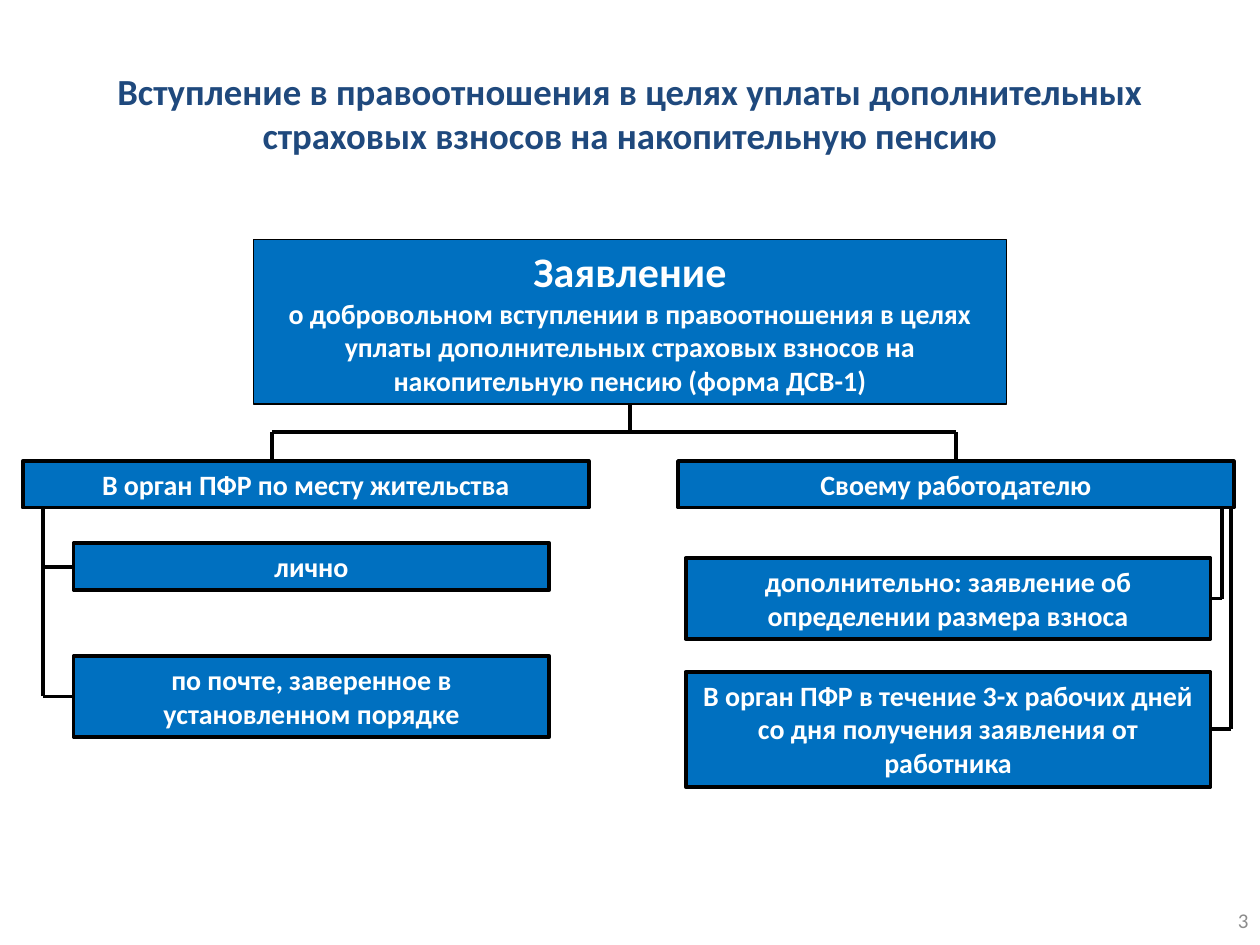
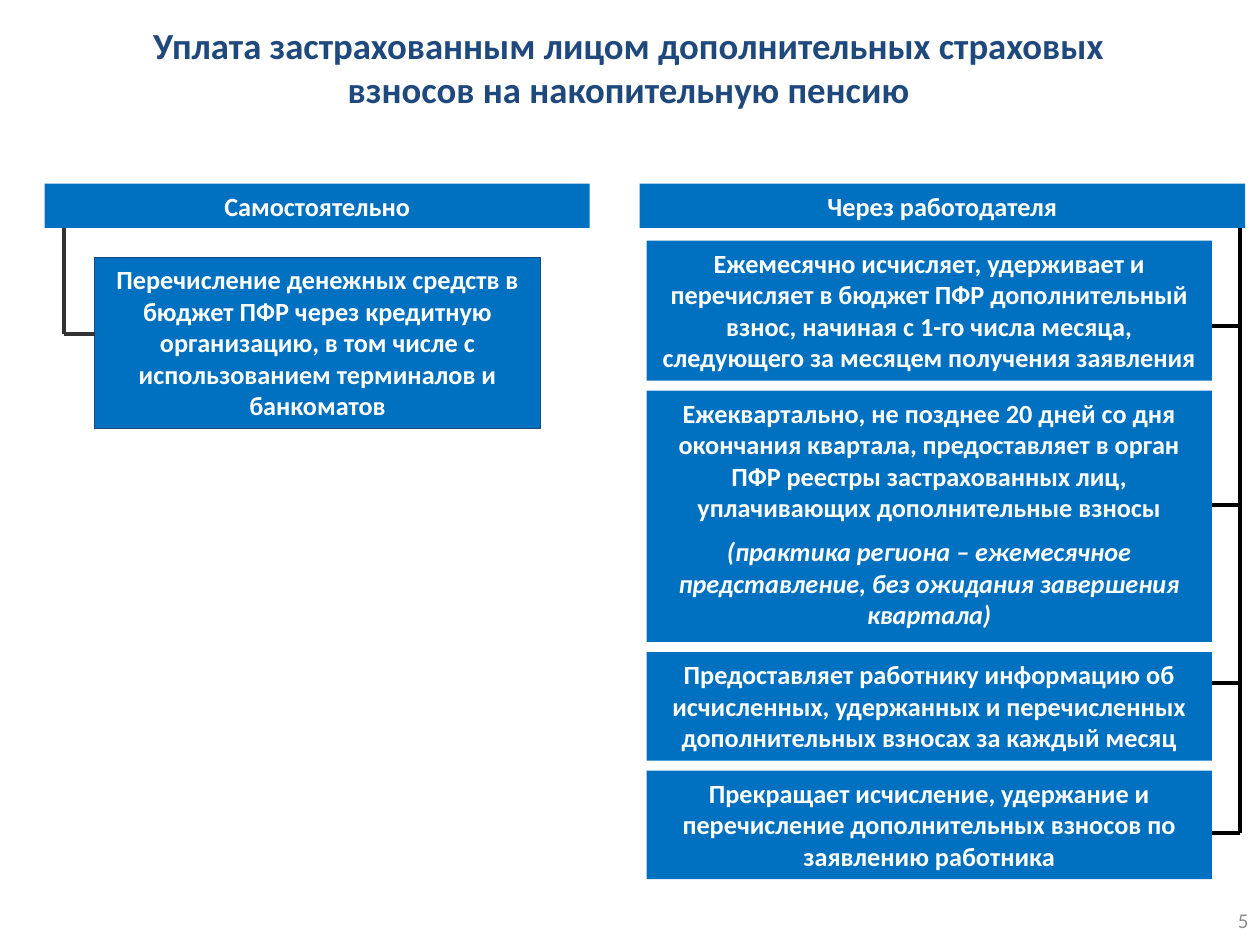
from dataclasses import dataclass
from itertools import accumulate
from typing import Any, Optional

import pptx
import pptx.dml.color
import pptx.enum.shapes
import pptx.enum.text
import pptx.oxml.xmlchemy
import pptx.shapes.autoshape
import pptx.slide
import pptx.util

Pt = pptx.util.Pt
RGB = pptx.dml.color.RGBColor
ALIGN = pptx.enum.text.PP_ALIGN
ANCHOR = pptx.enum.text.MSO_ANCHOR
TOP, LEFT, BOTTOM, RIGHT = range(4)


@dataclass(frozen=True)
class Theme:
    font: str = "Calibri"
    navy: str = "1F497D"
    blue: str = "0070C0"
    white: str = "FFFFFF"
    black: str = "000000"
    charcoal: str = "333333"
    grey: str = "8C8C8C"
    title: float = 21
    heading: float = 24
    large: float = 16
    medium: float = 15
    number: float = 12
    thin: float = 0.75
    thick: float = 2.25


THEME = Theme()


@dataclass(frozen=True)
class Para:
    text: str
    size: float
    italic: bool = False
    before: float = 0


@dataclass(frozen=True)
class Box:
    left: float
    top: float
    width: float
    height: float
    paras: tuple[Para, ...]
    border: Optional[str] = None
    weight: float = THEME.thick

    @property
    def bottom(self) -> float:
        return self.top + self.height

    @property
    def right(self) -> float:
        return self.left + self.width

    @property
    def middle(self) -> float:
        return self.top + self.height / 2

    @property
    def center(self) -> float:
        return self.left + self.width / 2


@dataclass(frozen=True)
class Line:
    x1: float
    y1: float
    x2: float
    y2: float
    color: str = THEME.black
    start: Optional[tuple[Box, int]] = None
    end: Optional[tuple[Box, int]] = None


@dataclass(frozen=True)
class Scheme:
    title: str
    title_frame: tuple[float, float, float, float]
    number: str
    boxes: tuple[Box, ...]
    lines: tuple[Line, ...]


def apply(target: Any, formats: dict[str, Any]) -> None:
    for name, value in formats.items():
        setattr(target, name, value)


def place(sp: Any, frame: tuple[float, float, float, float]) -> None:
    names = ("left", "top", "width", "height")
    apply(sp, dict(zip(names, map(Pt, frame))))


def write(tf: Any, paras: tuple[Para, ...], color: str,
          bold: bool = True, align: Any = ALIGN.CENTER, anchor: Any = ANCHOR.MIDDLE) -> None:
    apply(tf, {"word_wrap": True, "auto_size": pptx.enum.text.MSO_AUTO_SIZE.NONE,
               "vertical_anchor": anchor})
    for i, para in enumerate(paras):
        p = tf.add_paragraph() if i else tf.paragraphs[0]
        apply(p, {"alignment": align, "space_before": Pt(para.before)})
        r = p.add_run()
        r.text = para.text
        apply(r.font, {"name": THEME.font, "size": Pt(para.size), "bold": bold,
                       "italic": para.italic})
        r.font.color.rgb = RGB.from_string(color)


def draw_box(s: pptx.slide.Slide, box: Box) -> pptx.shapes.autoshape.Shape:
    sp = s.shapes.add_shape(pptx.enum.shapes.MSO_SHAPE.RECTANGLE,
                            Pt(box.left), Pt(box.top), Pt(box.width), Pt(box.height))
    sp.shadow.inherit = False
    sp.fill.solid()
    sp.fill.fore_color.rgb = RGB.from_string(THEME.blue)
    if box.border:
        sp.line.color.rgb = RGB.from_string(box.border)
        sp.line.width = Pt(box.weight)
    else:
        sp.line.fill.background()
    write(sp.text_frame, box.paras, THEME.white, anchor=ANCHOR.TOP)
    return sp


def draw_line(s: pptx.slide.Slide, line: Line, drawn: dict[Box, Any]) -> None:
    cxn = s.shapes.add_connector(pptx.enum.shapes.MSO_CONNECTOR.STRAIGHT,
                                 Pt(line.x1), Pt(line.y1), Pt(line.x2), Pt(line.y2))
    cxn.line.color.rgb = RGB.from_string(line.color)
    cxn.line.width = Pt(THEME.thick)
    cxn._element.spPr.append(pptx.oxml.xmlchemy.OxmlElement("a:effectLst"))
    if line.start:
        cxn.begin_connect(drawn[line.start[0]], line.start[1])
    if line.end:
        cxn.end_connect(drawn[line.end[0]], line.end[1])


def draw_scheme(prs: Any, scheme: Scheme) -> None:
    s = prs.slides.add_slide(prs.slide_layouts[5])
    place(s.shapes.title, scheme.title_frame)
    write(s.shapes.title.text_frame, (Para(scheme.title, THEME.title),), THEME.navy)
    drawn = {box: draw_box(s, box) for box in scheme.boxes}
    for line in scheme.lines:
        draw_line(s, line, drawn)
    number = s.shapes.add_textbox(Pt(553), Pt(511), Pt(167.5), Pt(29))
    write(number.text_frame, (Para(scheme.number, THEME.number),), THEME.grey,
          bold=False, align=ALIGN.RIGHT)


def branch(x: float, box: Box, side: int) -> Line:
    edge = box.left if side == LEFT else box.right
    return Line(x, box.middle, edge, box.middle, end=(box, side))


def joining() -> Scheme:
    def option(left: float, top: float, width: float, height: float, text: str) -> Box:
        return Box(left, top, width, height, (Para(text, THEME.large),), THEME.black)

    statement = Box(144.75, 137, 430.5, 94, (
        Para("Заявление", THEME.heading),
        Para("о добровольном вступлении в правоотношения в целях уплаты дополнительных "
             "страховых взносов на накопительную пенсию (форма ДСВ-1)", THEME.large),
    ), THEME.black, THEME.thin)
    fund = option(13, 263.5, 323.5, 26.5, "В орган ПФР по месту жительства")
    employer = option(387.5, 263.5, 317.5, 26.5, "Своему работодателю")
    in_person = option(42, 310.5, 272, 26.5, "лично")
    by_mail = option(42, 375, 272, 46, "по почте, заверенное в установленном порядке")
    amount = option(391.75, 319, 300, 46,
                    "дополнительно: заявление об определении размера взноса")
    deadline = option(391.75, 384, 300, 65.5,
                      "В орган ПФР в течение 3-х рабочих дней со дня получения заявления "
                      "от работника")

    bus, fund_x, fund_stem, amount_stem, deadline_stem = 247, 155.5, 24.5, 698.5, 703.5
    return Scheme(
        "Вступление в правоотношения в целях уплаты дополнительных страховых взносов "
        "на накопительную пенсию",
        (42.5, 26, 635, 77), "3",
        (statement, fund, employer, in_person, by_mail, amount, deadline),
        (
            Line(statement.center, statement.bottom, statement.center, bus,
                 start=(statement, BOTTOM)),
            Line(fund_x, bus, employer.center, bus),
            Line(fund_x, bus, fund_x, fund.top),
            Line(employer.center, bus, employer.center, employer.top, end=(employer, TOP)),
            Line(fund_stem, fund.bottom, fund_stem, by_mail.middle),
            branch(fund_stem, in_person, LEFT),
            branch(fund_stem, by_mail, LEFT),
            Line(amount_stem, employer.bottom, amount_stem, amount.middle),
            branch(amount_stem, amount, RIGHT),
            Line(deadline_stem, employer.bottom, deadline_stem, deadline.middle),
            branch(deadline_stem, deadline, RIGHT),
        ))


def payment() -> Scheme:
    def heading(left: float, width: float, text: str) -> Box:
        return Box(left, 105, width, 25.25, (Para(text, THEME.medium),))

    alone = heading(25.5, 311.5, "Самостоятельно")
    employer = heading(365.5, 346, "Через работодателя")
    transfer = Box(54, 147, 255, 98, (
        Para("Перечисление денежных средств в бюджет ПФР через кредитную организацию, "
             "в том числе с использованием терминалов и банкоматов", THEME.medium),
    ), THEME.navy, THEME.thin)
    duties = (
        (80, ("Ежемесячно исчисляет, удерживает и перечисляет в бюджет ПФР дополнительный "
              "взнос, начиная с 1-го числа месяца, следующего за месяцем получения "
              "заявления",)),
        (143.5, ("Ежеквартально, не позднее 20 дней со дня окончания квартала, "
                 "предоставляет в орган ПФР реестры застрахованных лиц, уплачивающих "
                 "дополнительные взносы",
                 "(практика региона – ежемесячное представление, без ожидания завершения "
                 "квартала)")),
        (62, ("Предоставляет работнику информацию об исчисленных, удержанных и "
              "перечисленных дополнительных взносах за каждый месяц",)),
        (62, ("Прекращает исчисление, удержание и перечисление дополнительных взносов "
              "по заявлению работника",)),
    )
    gap = 5.8
    tops = accumulate((height + gap for height, _ in duties), initial=137.5)
    steps = tuple(
        Box(369.5, top, 323, height, tuple(
            Para(text, THEME.medium, italic=i > 0, before=7.2 * i)
            for i, text in enumerate(texts)))
        for top, (height, texts) in zip(tops, duties))

    alone_stem, transfer_y, employer_stem = 36.75, 191, 708.5
    branch_ys = (186.5, 288.5, 390.5, 476)
    return Scheme(
        "Уплата застрахованным лицом дополнительных страховых взносов на накопительную пенсию",
        (78.5, 11, 561.5, 54.5), "5",
        (alone, employer, transfer, *steps),
        (
            Line(alone_stem, alone.bottom, alone_stem, transfer_y, THEME.charcoal),
            Line(alone_stem, transfer_y, transfer.left, transfer_y, THEME.charcoal),
            Line(employer_stem, employer.bottom, employer_stem, branch_ys[-1]),
            *(Line(step.right, y, employer_stem, y) for step, y in zip(steps, branch_ys)),
        ))


def main() -> None:
    prs = pptx.Presentation()
    apply(prs, {"slide_width": Pt(720), "slide_height": Pt(540)})
    for scheme in (joining(), payment()):
        draw_scheme(prs, scheme)
    prs.save("out.pptx")


if __name__ == "__main__":
    main()
